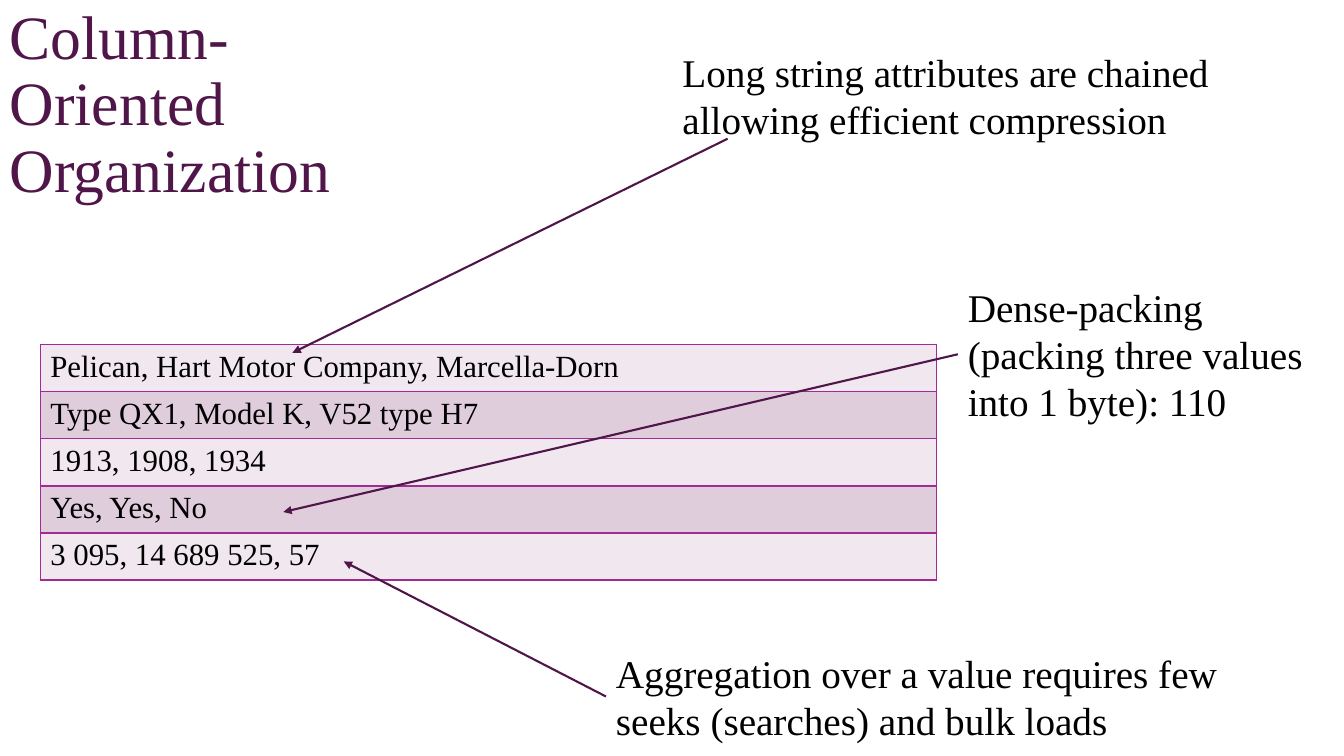
from dataclasses import dataclass

from lxml import etree
from pptx import Presentation
from pptx.dml.color import RGBColor
from pptx.enum.shapes import MSO_CONNECTOR
from pptx.enum.text import MSO_ANCHOR
from pptx.oxml.ns import qn
from pptx.util import Inches, Pt

STRAIGHT = MSO_CONNECTOR.STRAIGHT
TOP, MIDDLE = MSO_ANCHOR.TOP, MSO_ANCHOR.MIDDLE


@dataclass(frozen=True)
class Theme:
    font: str = "Times New Roman"
    accent: str = "501649"
    text: str = "000000"
    border: str = "A02B93"
    bands: tuple = ("F0E8EE", "DFCDDC")
    title_size: int = 44
    note_size: int = 28
    cell_size: int = 22
    arrow_width: float = 1.5
    border_width: float = 1


THEME = Theme()

# Positions and sizes are percentages of the slide's width and height.
TITLE = "Column-Oriented Organization"
TITLE_BOX = (0, 0, 25.58, 28)

STORED_COLUMNS = [
    "Pelican, Hart Motor Company, Marcella-Dorn",
    "Type QX1, Model K, V52 type H7",
    "1913, 1908, 1934",
    "Yes, Yes, No",
    "3 095, 14 689 525, 57",
]
TABLE_LEFT, TABLE_TOP, TABLE_WIDTH, ROW_HEIGHT = 3, 45.6, 66.69, 5.47

# Each note: text, box, arrow start as a share of the box, arrow end on the slide.
NOTES = [
    ("Long string attributes are chained allowing efficient compression",
     (50.04, 5.73, 41.04, 13.87), (0.1, 0.91), (21.76, 46.67)),
    ("Aggregation over a value requires few seeks (searches) and bulk loads",
     (45.09, 85.2, 47.94, 13.87), (0, 0.5), (25.58, 74.27)),
    ("Dense-packing (packing three values into 1 byte): 110",
     (71.27, 36.8, 27.53, 20.13), (0, 0.5), (21.08, 67.73)),
]

presentation = Presentation()
presentation.slide_width = Inches(13.33)
presentation.slide_height = Inches(7.5)
slide = presentation.slides.add_slide(presentation.slide_layouts[6])


def to_emu(*percentages):
    """Turn alternating horizontal and vertical percentages into lengths."""
    sides = (presentation.slide_width, presentation.slide_height)
    return [int(sides[i % 2] * value / 100) for i, value in enumerate(percentages)]


def write(text_frame, text, size, color):
    paragraph = text_frame.paragraphs[0]
    run = paragraph.add_run()
    run.text = text
    run.font.name = THEME.font
    run.font.size = Pt(size)
    run.font.color.rgb = RGBColor.from_string(color)
    return paragraph


def add_text(text, box, size, color, anchor=TOP):
    text_frame = slide.shapes.add_textbox(*to_emu(*box)).text_frame
    text_frame.word_wrap = True
    text_frame.vertical_anchor = anchor
    return write(text_frame, text, size, color)


def add_arrow(start, end):
    arrow = slide.shapes.add_connector(STRAIGHT, *to_emu(*start, *end))
    arrow.line.color.rgb = RGBColor.from_string(THEME.accent)
    arrow.line.width = Pt(THEME.arrow_width)
    etree.SubElement(arrow.line._get_or_add_ln(), qn("a:tailEnd"), type="triangle")
    etree.SubElement(arrow._element.spPr, qn("a:effectLst"))


def add_borders(cell):
    properties = cell._tc.get_or_add_tcPr()
    for position, side in enumerate(("lnL", "lnR", "lnT", "lnB")):
        line = etree.Element(qn(f"a:{side}"), w=str(Pt(THEME.border_width)))
        fill = etree.SubElement(line, qn("a:solidFill"))
        etree.SubElement(fill, qn("a:srgbClr"), val=THEME.border)
        properties.insert(position, line)


def add_column_table():
    count = len(STORED_COLUMNS)
    box = to_emu(TABLE_LEFT, TABLE_TOP, TABLE_WIDTH, ROW_HEIGHT * count)
    table = slide.shapes.add_table(count, 1, *box).table
    table.first_row = False
    table.horz_banding = False
    for index, values in enumerate(STORED_COLUMNS):
        cell = table.cell(index, 0)
        cell.fill.solid()
        band = THEME.bands[index % len(THEME.bands)]
        cell.fill.fore_color.rgb = RGBColor.from_string(band)
        add_borders(cell)
        write(cell.text_frame, values, THEME.cell_size, THEME.text)


title = add_text(TITLE, TITLE_BOX, THEME.title_size, THEME.accent, MIDDLE)
title.line_spacing = 0.9
add_column_table()
for note, box, (share_x, share_y), target in NOTES:
    left, top, width, height = box
    add_text(note, box, THEME.note_size, THEME.text)
    add_arrow((left + share_x * width, top + share_y * height), target)

presentation.save("out.pptx")
